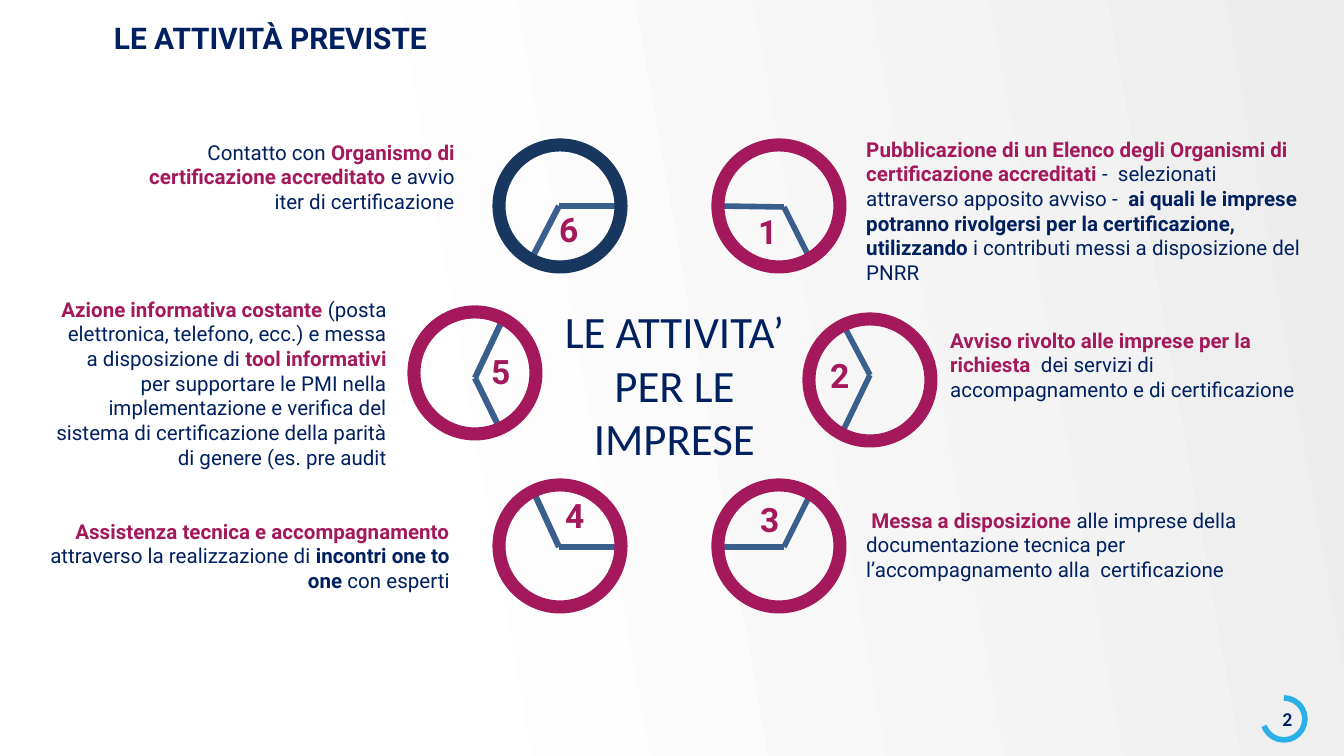
"""Builds the slide on the six planned activities for companies."""
from dataclasses import dataclass

from lxml import etree
from pptx import Presentation
from pptx import util as u
from pptx.dml.color import RGBColor
from pptx.enum import shapes, text
from pptx.oxml.ns import qn

EMU_PER_PX = 914400 / 134.4
RING_SIZE = 122
NAVY, MAGENTA, DARK_BLUE = "002060", "A3195B", "17375E"
HAND_BLUE, SKY, GREY, WHITE = "3A5F8C", "2AAFE7", "EDEDED", "FFFFFF"
LEFT, CENTER, RIGHT = text.PP_ALIGN.LEFT, text.PP_ALIGN.CENTER, text.PP_ALIGN.RIGHT

Point = tuple[int, int]
Box = tuple[int, int, int, int]


@dataclass(frozen=True)
class Phrase:
    words: str
    color: str = NAVY
    bold: bool = False


@dataclass(frozen=True)
class Activity:
    number: str
    number_at: Point
    center: Point
    joint: Point
    hand_ends: tuple[Point, Point]
    hand_width: float
    box: Box
    align: text.PP_ALIGN
    phrases: tuple[Phrase, ...]
    ring_color: str = MAGENTA


ACTIVITIES = (
    Activity("1", (745, 204), (779, 206), (784, 207), ((720, 206), (810, 259)), 3,
             (853, 130, 468, 163), LEFT, (
                 Phrase("Pubblicazione di un Elenco degli Organismi di certificazione accreditati ",
                        MAGENTA, True),
                 Phrase("-  selezionati attraverso apposito avviso -  "),
                 Phrase("ai quali le imprese potranno rivolgersi per la certificazione, utilizzando ",
                        bold=True),
                 Phrase("i contributi messi a disposizione del PNRR"))),
    Activity("2", (817, 348), (870, 380), (870, 375), ((845, 328), (843, 431)), 3,
             (937, 321, 372, 89), LEFT, (
                 Phrase("Avviso rivolto alle imprese per la richiesta  ", MAGENTA, True),
                 Phrase("dei servizi di accompagnamento e di certificazione"))),
    Activity("3", (747, 492), (779, 546), (784, 547), ((809, 497), (720, 547)), 3,
             (853, 501, 429, 89), LEFT, (
                 Phrase(" Messa a disposizione ", MAGENTA, True),
                 Phrase("alle imprese della documentazione tecnica per "
                        "l’accompagnamento alla  certificazione"))),
    Activity("4", (552, 488), (560, 546), (559, 547), ((618, 547), (535, 495)), 3.25,
             (34, 512, 429, 89), RIGHT, (
                 Phrase("Assistenza tecnica e accompagnamento ", MAGENTA, True),
                 Phrase("attraverso la realizzazione di "),
                 Phrase("incontri one to one ", bold=True),
                 Phrase("con esperti"))),
    Activity("5", (478, 344), (475, 373), (475, 378), ((499, 427), (501, 323)), 3.25,
             (40, 290, 360, 188), RIGHT, (
                 Phrase("Azione informativa costante", MAGENTA, True),
                 Phrase(" (posta elettronica, telefono, ecc.) e messa a disposizione di "),
                 Phrase("tool informativi ", MAGENTA, True),
                 Phrase("per supportare le PMI nella implementazione e verifica del sistema "
                        "di certificazione della parità di genere (es. pre audit"))),
    Activity("6", (546, 202), (560, 206), (559, 206), ((618, 206), (532, 258)), 3.25,
             (108, 133, 360, 89), RIGHT, (
                 Phrase("Contatto con "),
                 Phrase("Organismo di certificazione accreditato ", MAGENTA, True),
                 Phrase("e avvio iter di certificazione")), DARK_BLUE),
)


def px(length: int) -> int:
    """Turn pixels into EMU."""
    return round(length * EMU_PER_PX)


def rgb(code: str) -> RGBColor:
    """Turn a hex string into a colour."""
    return RGBColor.from_string(code)


def write(frame, phrases: tuple[Phrase, ...], size: float, font: str, align=LEFT) -> None:
    """Fill a text frame with one paragraph of styled runs."""
    frame.word_wrap = True
    frame.auto_size = text.MSO_AUTO_SIZE.NONE
    frame.vertical_anchor = text.MSO_ANCHOR.TOP
    paragraph = frame.paragraphs[0]
    paragraph.alignment = align
    for phrase in phrases:
        run = paragraph.add_run()
        run.text = phrase.words
        run.font.size, run.font.name, run.font.bold = u.Pt(size), font, phrase.bold
        run.font.color.rgb = rgb(phrase.color)


def add_text(slide, box: Box, phrases: tuple[Phrase, ...], size: float,
             font: str = "Roboto", align=LEFT) -> None:
    """Add a text box."""
    write(slide.shapes.add_textbox(*map(px, box)).text_frame, phrases, size, font, align)


def add_outline(slide, kind, box: Box, color: str, width: float):
    """Add an unfilled preset shape."""
    outline = slide.shapes.add_shape(kind, *map(px, box))
    outline.shadow.inherit = False
    outline.fill.background()
    outline.line.color.rgb = rgb(color)
    outline.line.width = u.Pt(width)
    return outline


def add_hand(slide, start: Point, end: Point, width: float) -> None:
    """Add one clock hand."""
    hand = slide.shapes.add_connector(shapes.MSO_CONNECTOR.STRAIGHT, *map(px, start + end))
    hand.line.color.rgb = rgb(HAND_BLUE)
    hand.line.width = u.Pt(width)
    etree.SubElement(hand._element.spPr, qn("a:effectLst"))


def add_activity(slide, activity: Activity) -> None:
    """Add a dial with its number and description."""
    for end in activity.hand_ends:
        add_hand(slide, activity.joint, end, activity.hand_width)
    x, y = (middle - RING_SIZE // 2 for middle in activity.center)
    add_outline(slide, shapes.MSO_SHAPE.OVAL, (x, y, RING_SIZE, RING_SIZE),
                activity.ring_color, 7)
    add_text(slide, activity.number_at + (36, 54),
             (Phrase(activity.number, MAGENTA, True),), 18)
    add_text(slide, activity.box, activity.phrases, 11, align=activity.align)


def set_background(slide) -> None:
    """Shade the background from grey to white."""
    fill = slide.background.fill
    fill.gradient()
    fill.gradient_angle = 190
    for stop, color, position in zip(fill.gradient_stops, (GREY, WHITE), (0, 0.72)):
        stop.color.rgb = rgb(color)
        stop.position = position


def set_title(slide, words: str) -> None:
    """Place and format the title."""
    title = slide.shapes.title
    title.left, title.top, title.width, title.height = map(px, (114, 20, 1230, 58))
    frame = title.text_frame
    frame.margin_left = frame.margin_top = frame.margin_right = frame.margin_bottom = 0
    write(frame, (Phrase(words, bold=True),), 16, "Roboto")


def main() -> None:
    """Build and save the slide."""
    deck = Presentation()
    deck.slide_width, deck.slide_height = px(1344), px(756)
    slide = deck.slides.add_slide(deck.slide_layouts[5])
    set_background(slide)
    set_title(slide, "LE ATTIVITÀ PREVISTE")
    page_arc = add_outline(slide, shapes.MSO_SHAPE.ARC, (1263, 698, 42, 42), SKY, 3)
    page_arc.adjustments[0], page_arc.adjustments[1] = 162, 96.43
    add_text(slide, (1269, 700, 52, 39), (Phrase("2", bold=True),), 10.5, "Calibri")
    for activity in ACTIVITIES:
        add_activity(slide, activity)
    add_text(slide, (551, 297, 247, 176), (Phrase("LE ATTIVITA’ PER LE IMPRESE"),),
             24, "Calibri", CENTER)
    deck.save("out.pptx")


if __name__ == "__main__":
    main()
